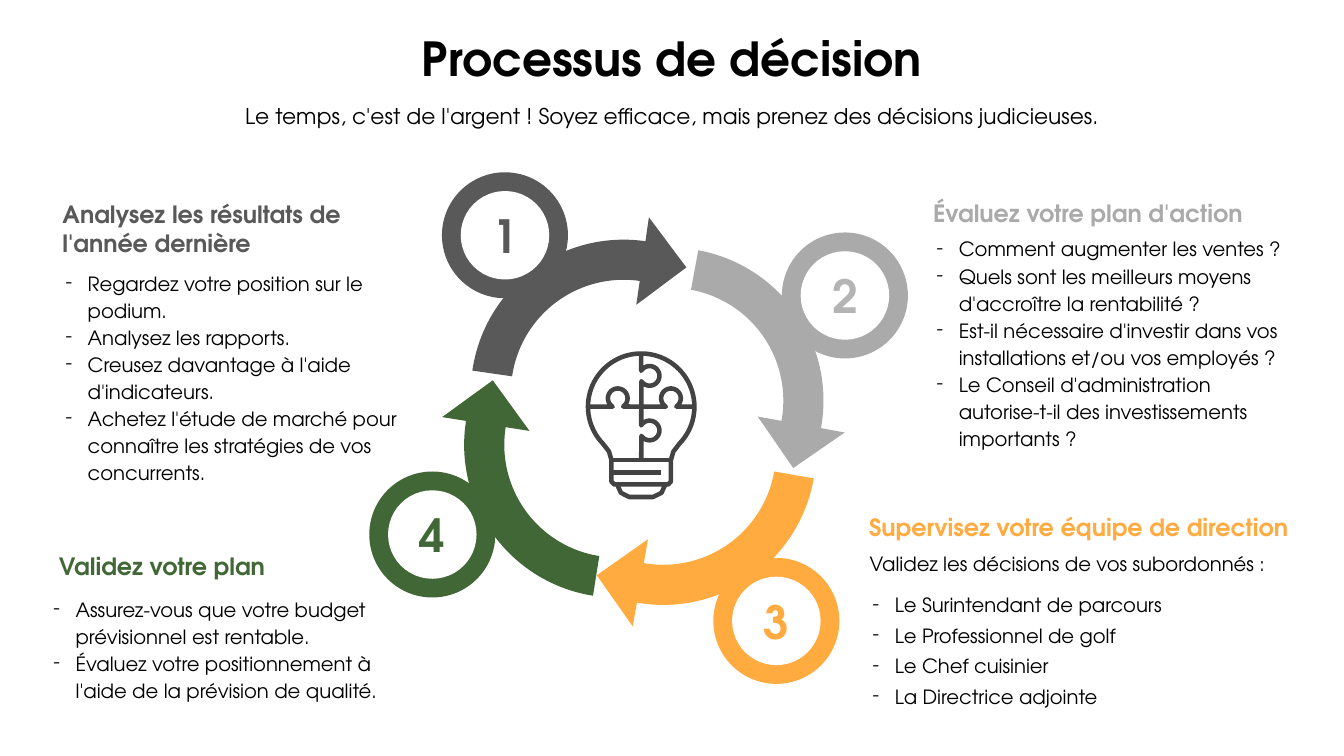
from math import cos, radians, sin

from lxml import etree
from pptx import Presentation
from pptx.dml.color import RGBColor
from pptx.enum.shapes import MSO_SHAPE
from pptx.enum.text import MSO_ANCHOR, MSO_AUTO_SIZE, PP_ALIGN
from pptx.oxml.ns import qn
from pptx.util import Pt

LEFT, CENTER = PP_ALIGN.LEFT, PP_ALIGN.CENTER
TOP, MIDDLE, BOTTOM = MSO_ANCHOR.TOP, MSO_ANCHOR.MIDDLE, MSO_ANCHOR.BOTTOM
NO_FIT = MSO_AUTO_SIZE.NONE
ELLIPSE, BENT_ARROW = MSO_SHAPE.OVAL, MSO_SHAPE.BENT_ARROW

FONT = "TeX Gyre Adventor"
BLACK, WHITE, DARK = "000000", "FFFFFF", "434343"
COMPARISON_LAYOUT = 4
RING, HOLE = 180, 126.4
ARROW_WIDTH, ARROW_HEIGHT = 281.5, 252.7
ARROW_ADJUSTMENTS = (0.227, 0.25, 0.25, 0.875)
BULB_X, BULB_Y, BULB_RADIUS, BULB_LINE = 915.8, 581, 76, 6.5

# Boxes are (left, top, width, height); arrows are (left, top, rotation).
STEPS = [
    {"number": "1", "color": "595959", "digit_color": "595959",
     "ring": (721.2, 336.1), "arrow": (691.2, 298.1, 8.2),
     "heading": ["Analysez les résultats de", "l'année dernière"],
     "heading_box": (82.1, 312.5, 552.2, 58.3),
     "bullets": ["Regardez votre position sur le podium.",
                 "Analysez les rapports.",
                 "Creusez davantage à l'aide d'indicateurs.",
                 "Achetez l'étude de marché pour connaître les stratégies "
                 "de vos concurrents."],
     "list_box": (82.1, 379.4, 552.2, 253.4)},
    {"number": "2", "color": "AAAAAA", "digit_color": "B4B4B4",
     "ring": (1206.7, 422.1), "arrow": (955.4, 392.4, 100.4),
     "heading": ["Évaluez votre plan d'action"],
     "heading_box": (1325.5, 269.3, 457.9, 58.3),
     "bullets": ["Comment augmenter les ventes ?",
                 "Quels sont les meilleurs moyens d'accroître la rentabilité ?",
                 "Est-il nécessaire d'investir dans vos installations et/ou "
                 "vos employés ?",
                 "Le Conseil d'administration autorise-t-il des "
                 "investissements importants ?"],
     "list_box": (1326.2, 330.5, 522.7, 277.2)},
    {"number": "3", "color": "FFAB40", "digit_color": "FFAB40",
     "ring": (1108.8, 887), "arrow": (861.1, 657.4, 189.9),
     "heading": ["Supervisez votre équipe de direction"],
     "heading_box": (1234.1, 718.6, 614.9, 58.3),
     "intro": "Validez les décisions de vos subordonnés :",
     "bullets": ["Le Surintendant de parcours", "Le Professionnel de golf",
                 "Le Chef cuisinier", "La Directrice adjointe"],
     "list_box": (1234.8, 779.8, 636.5, 277.2)},
    {"number": "4", "color": "406735", "digit_color": "406735",
     "ring": (617.4, 763.6), "arrow": (603.4, 565.9, 279),
     "heading": ["Validez votre plan"],
     "heading_box": (77, 774, 314.6, 58.3),
     "bullets": ["Assurez-vous que votre budget prévisionnel est rentable.",
                 "Évaluez votre positionnement à l'aide de la prévision "
                 "de qualité."],
     "list_box": (64.8, 845.3, 534.2, 197.3)},
]


def rgb(color):
    return RGBColor.from_string(color)


def set_all(target, values):
    for name, value in values.items():
        setattr(target, name, value)


def place(box, left, top, width, height):
    set_all(box, {"left": Pt(left), "top": Pt(top),
                  "width": Pt(width), "height": Pt(height)})


def prepare_frame(box, anchor=TOP, margin_x=7.2, margin_y=3.6):
    frame = box.text_frame
    set_all(frame, {"auto_size": NO_FIT, "word_wrap": True,
                    "vertical_anchor": anchor,
                    "margin_left": Pt(margin_x), "margin_right": Pt(margin_x),
                    "margin_top": Pt(margin_y), "margin_bottom": Pt(margin_y)})
    return frame


def add_para(frame, text, size, color=BLACK, bold=False, align=LEFT,
             spacing=1.0, before=0):
    first = frame.paragraphs[0]
    para = frame.add_paragraph() if first.runs else first
    set_all(para, {"alignment": align, "line_spacing": spacing,
                   "space_before": Pt(before), "space_after": Pt(0)})
    span = para.add_run()
    span.text = text
    set_all(span.font, {"name": FONT, "size": Pt(size), "bold": bold})
    span.font.color.rgb = rgb(color)
    return para


def set_bullet(para, char=None):
    """Give the paragraph a hanging bullet, or none without a char."""
    props = para._p.get_or_add_pPr()
    props.set("marL", str(Pt(36 if char else 0)))
    props.set("indent", str(Pt(-31.7 if char else 0)))
    if not char:
        etree.SubElement(props, qn("a:buNone"))
        return
    bullet_color = etree.SubElement(props, qn("a:buClr"))
    etree.SubElement(bullet_color, qn("a:srgbClr"), val=BLACK)
    etree.SubElement(props, qn("a:buFont"), typeface=FONT)
    etree.SubElement(props, qn("a:buChar"), char=char)


def add_filled_shape(page, kind, box, color):
    shape = page.shapes.add_shape(kind, *(Pt(length) for length in box))
    shape.shadow.inherit = False
    shape.fill.solid()
    shape.fill.fore_color.rgb = rgb(color)
    shape.line.fill.background()
    return shape


def add_cycle_arrow(page, step):
    left, top, rotation = step["arrow"]
    arrow = add_filled_shape(page, BENT_ARROW,
                             (left, top, ARROW_WIDTH, ARROW_HEIGHT), step["color"])
    arrow.rotation = rotation
    for index, value in enumerate(ARROW_ADJUSTMENTS):
        arrow.adjustments[index] = value


def add_number_ring(page, step):
    """Draw a ring around its centre point, with the step number inside."""
    x, y = step["ring"]
    for size, color in ((RING, step["color"]), (HOLE, WHITE)):
        disc = add_filled_shape(page, ELLIPSE,
                                (x - size / 2, y - size / 2, size, size), color)
    frame = prepare_frame(disc, MIDDLE, 0, 0)
    add_para(frame, step["number"], 65.3, step["digit_color"], True, CENTER)


def add_heading(page, step):
    box = page.shapes.add_textbox(*(Pt(length) for length in step["heading_box"]))
    frame = prepare_frame(box, BOTTOM)
    for line in step["heading"]:
        add_para(frame, line, 34, step["color"], True)


def fill_list(box, step):
    place(box, *step["list_box"])
    frame = prepare_frame(box)
    intro = step.get("intro")
    if intro:
        set_bullet(add_para(frame, intro, 28, spacing=1.15, before=4.8))
    for index, text in enumerate(step["bullets"]):
        if intro:
            spacing, before = 1.0, 10 if index else 25
        else:
            spacing, before = 1.15, 0 if index else 4.8
        set_bullet(add_para(frame, text, 28, spacing=spacing, before=before), "-")


def arc(x, y, radius, start, end):
    return [(x + radius * cos(radians(angle)), y + radius * sin(radians(angle)))
            for angle in range(start, end + 1, 4)]


def add_bulb_stroke(page, points, close=False):
    """Draw a line through points measured from the bulb's centre."""
    points = [(Pt(BULB_X + x), Pt(BULB_Y + y)) for x, y in points]
    builder = page.shapes.build_freeform(*points[0])
    builder.add_line_segments(points[1:], close=close)
    stroke = builder.convert_to_shape()
    stroke.shadow.inherit = False
    stroke.fill.background()
    stroke.line.color.rgb = rgb(DARK)
    stroke.line.width = Pt(BULB_LINE)


def add_bulb(page):
    neck = [(46, 64), (42.5, 76), (42.5, 107), (38.5, 111)]
    mirrored_neck = [(-x, y) for x, y in reversed(neck)]
    glass = arc(0, 0, BULB_RADIUS, 136, 404)
    add_bulb_stroke(page, glass + neck + mirrored_neck, close=True)
    across = [point for x in (-33.5, 42.5) for point in arc(x, -12, 14, 121, 419)]
    add_bulb_stroke(page, [(-BULB_RADIUS, 0), *across, (BULB_RADIUS, 0)])
    down = [point for y in (-44, 34) for point in arc(12, y, 14, 211, 509)]
    add_bulb_stroke(page, [(0, -BULB_RADIUS), *down, (0, BULB_RADIUS)])
    add_bulb_stroke(page, [(-42.5, 76), (42.5, 76)])
    add_bulb_stroke(page, [(-42.5, 94), (28, 94)])
    add_bulb_stroke(page, [(-34, 112), (-29, 123), (-17, 129),
                           (17, 129), (29, 123), (34, 112)])


def main():
    deck = Presentation()
    set_all(deck, {"slide_width": Pt(1919.5), "slide_height": Pt(1080)})
    page = deck.slides.add_slide(deck.slide_layouts[COMPARISON_LAYOUT])
    for box in list(page.placeholders):
        if box.placeholder_format.idx > len(STEPS):
            box.element.getparent().remove(box.element)

    title = page.shapes.title
    place(title, 135.4, 38.2, 1648, 87.1)
    add_para(prepare_frame(title), "Processus de décision", 67, bold=True, align=CENTER)
    subtitle = page.shapes.add_textbox(Pt(308.9), Pt(131), Pt(1301), Pt(66.2))
    add_para(prepare_frame(subtitle, TOP, 17.3, 8.6),
             "Le temps, c'est de l'argent ! Soyez efficace, mais prenez des "
             "décisions judicieuses.", 31, align=CENTER, spacing=1.2)

    bodies = {box.placeholder_format.idx: box for box in page.placeholders}
    for index, step in enumerate(STEPS, start=1):
        add_cycle_arrow(page, step)
        add_number_ring(page, step)
        add_heading(page, step)
        fill_list(bodies[index], step)
    add_bulb(page)
    deck.save("out.pptx")


if __name__ == "__main__":
    main()
